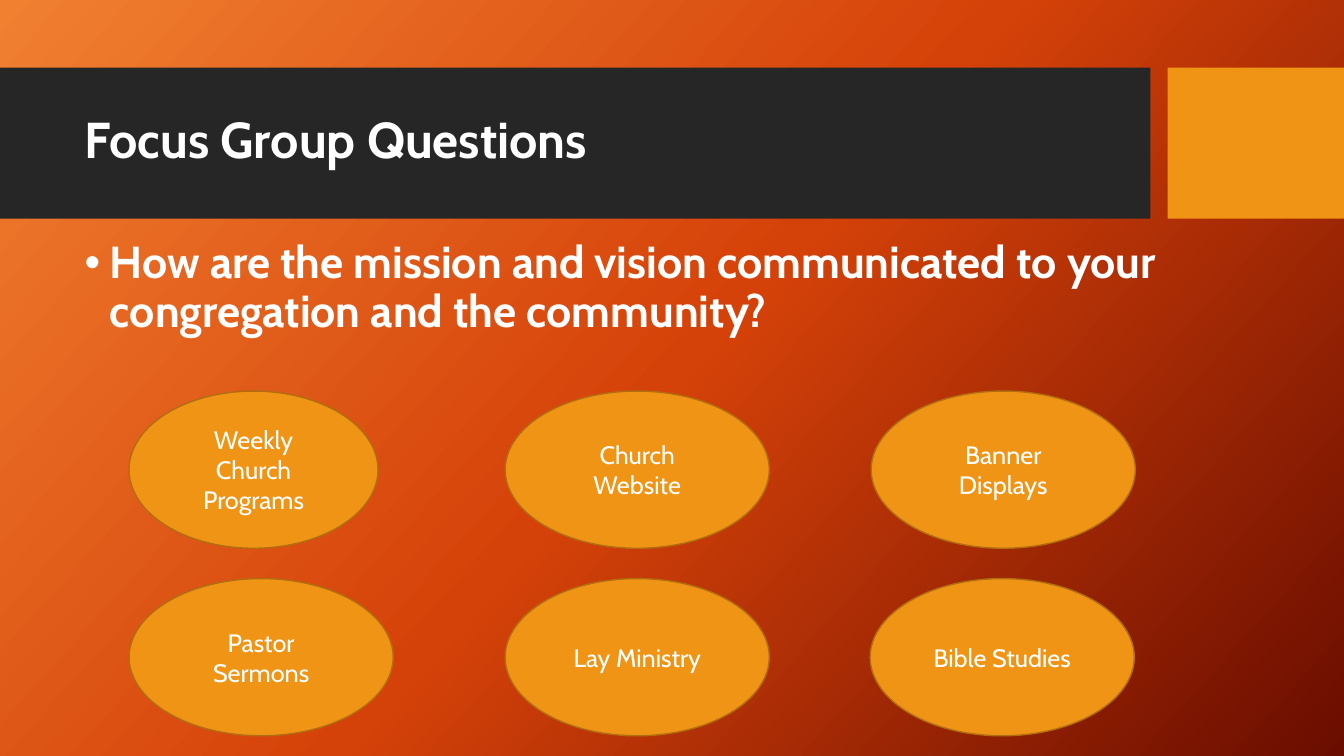
from copy import deepcopy

from pptx import Presentation
from pptx.dml.color import RGBColor
from pptx.enum.shapes import MSO_SHAPE
from pptx.enum.text import MSO_ANCHOR, MSO_AUTO_SIZE, PP_ALIGN
from pptx.oxml.ns import qn
from pptx.util import Inches, Pt

RECTANGLE, OVAL = MSO_SHAPE.RECTANGLE, MSO_SHAPE.OVAL
LEFT, CENTER = PP_ALIGN.LEFT, PP_ALIGN.CENTER
TOP, MIDDLE = MSO_ANCHOR.TOP, MSO_ANCHOR.MIDDLE
WIDTH, HEIGHT = 13.33, 7.5
WHITE, CHARCOAL, AMBER, BRONZE = "FFFFFF", "262626", "F09415", "B26D10"
GRADIENT = [(0, "F18031"), (0.5, "D54209"), (1, "6A0D00")]

# Each channel: text, left and width of its oval
CHANNEL_ROWS = [
    [("Weekly Church Programs", 1.28, 2.47), ("Church Website", 5.01, 2.62),
     ("Banner Displays", 8.64, 2.62)],
    [("Pastor Sermons", 1.28, 2.62), ("Lay Ministry", 5.01, 2.62),
     ("Bible Studies", 8.63, 2.62)],
]


def color(value):
    return RGBColor.from_string(value)


def write(shape, text, size, bold=False, align=LEFT, anchor=MIDDLE,
          spacing=1.0, bullet=None):
    frame = shape.text_frame
    frame.word_wrap = True
    frame.auto_size = MSO_AUTO_SIZE.NONE
    frame.vertical_anchor = anchor
    para = frame.paragraphs[0]
    para.alignment = align
    para.line_spacing = spacing
    para.space_before = Pt(0)
    if bullet:
        props = para._p.get_or_add_pPr()
        props.set("marL", str(Inches(0.25)))
        props.set("indent", str(Inches(-0.25)))
        font = props.makeelement(qn("a:buFont"), {"typeface": "Arial"})
        props.append(font)
        props.append(props.makeelement(qn("a:buChar"), {"char": bullet}))
    span = para.add_run()
    span.text = text
    span.font.name = "Cabin"
    span.font.size = Pt(size)
    span.font.bold = bold
    span.font.color.rgb = color(WHITE)


def place(shape, left, top, width, height):
    shape.left, shape.top = Inches(left), Inches(top)
    shape.width, shape.height = Inches(width), Inches(height)


def add_block(page, kind, box, fill, line=None):
    shape = page.shapes.add_shape(kind, *map(Inches, box))
    shape.shadow.inherit = False
    shape.fill.solid()
    shape.fill.fore_color.rgb = color(fill)
    if line:
        shape.line.color.rgb = color(line)
        shape.line.width = Pt(1)
    else:
        shape.line.fill.background()
    return shape


def paint_background(page):
    fill = page.background.fill
    fill.gradient()
    stops = next(page._element.iter(qn("a:gsLst")))
    while len(stops) < len(GRADIENT):
        stops.append(deepcopy(stops[-1]))
    for stop, (position, value) in zip(fill.gradient_stops, GRADIENT):
        stop.position = position
        stop.color.rgb = color(value)
    fill.gradient_angle = 360 - 42


def add_header(page, top, height):
    bands = [add_block(page, RECTANGLE, (0, top, 11.41, height), CHARCOAL),
             add_block(page, RECTANGLE, (11.58, top, WIDTH - 11.58, height), AMBER)]
    for index, band in enumerate(bands):  # bands go behind the title
        page.shapes._spTree.insert(2 + index, band._element)
    title = page.shapes.title
    place(title, 0.74, top + 0.15, 10.51, 1.18)
    write(title, "Focus Group Questions", 36, bold=True, spacing=0.9)


def add_question(page, left, top, width):
    body = page.placeholders[1]
    place(body, left, top, width, HEIGHT - top)
    write(body, "How are the mission and vision communicated to your "
          "congregation and the community?", 32, bold=True, anchor=TOP,
          spacing=0.9, bullet="•")


def add_channels(page, top, height, pitch):
    for row, channels in enumerate(CHANNEL_ROWS):
        for text, left, width in channels:
            box = (left, top + row * pitch, width, height)
            oval = add_block(page, OVAL, box, AMBER, BRONZE)
            write(oval, text, 18, align=CENTER)


def main():
    deck = Presentation()
    deck.slide_width, deck.slide_height = Inches(WIDTH), Inches(HEIGHT)
    page = deck.slides.add_slide(deck.slide_layouts[1])
    paint_background(page)
    add_header(page, top=0.67, height=1.5)
    add_question(page, left=0.74, top=2.33, width=11.14)
    add_channels(page, top=3.88, height=1.56, pitch=1.86)
    deck.save("out.pptx")


if __name__ == "__main__":
    main()
